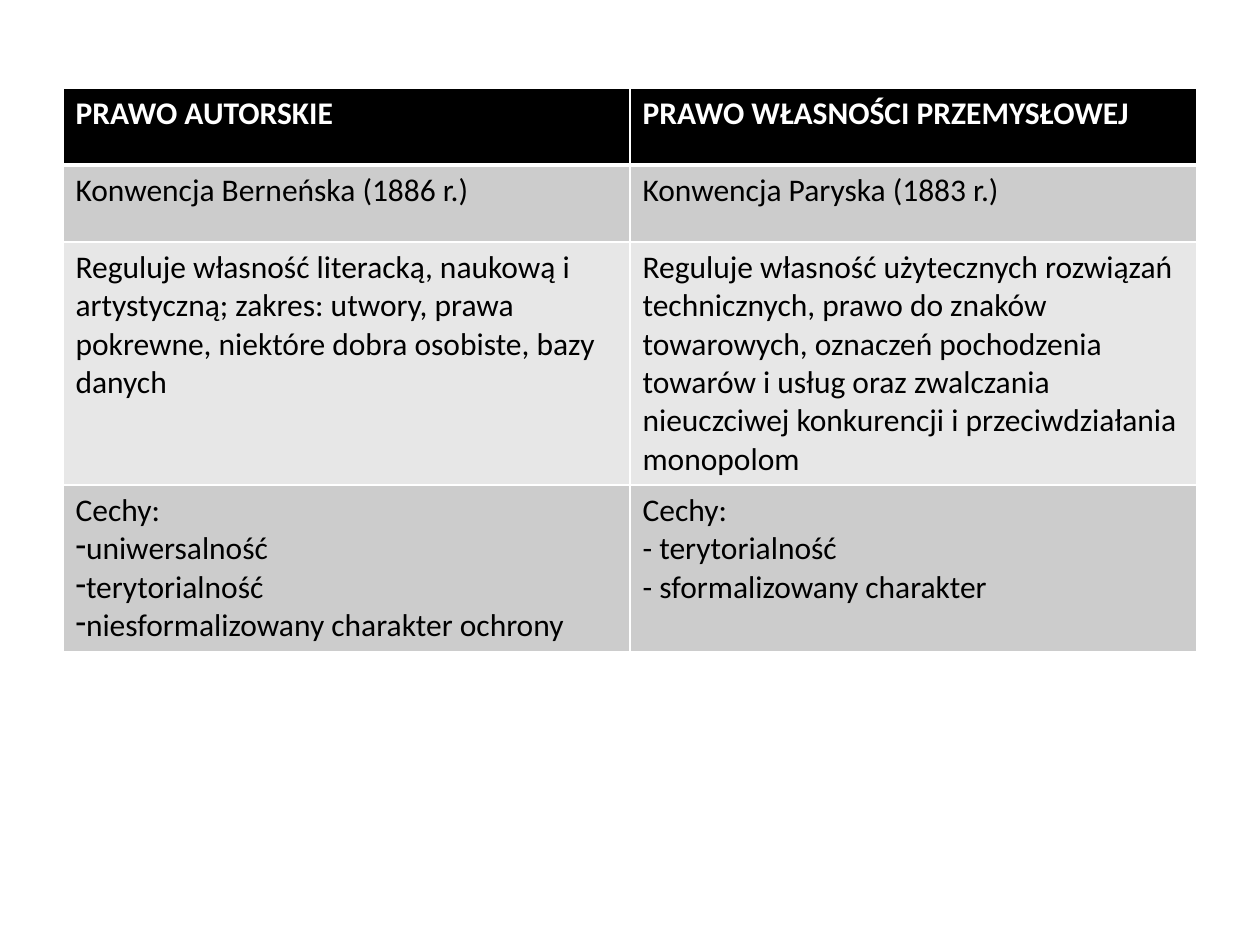
from dataclasses import dataclass

from lxml import etree
from pptx import Presentation
from pptx.dml.color import RGBColor
from pptx.oxml.ns import qn
from pptx.util import Inches, Pt

COLORS = {
    "white": "FFFFFF",
    "black": "000000",
    "band_dark": "CCCCCC",
    "band_light": "E7E7E7",
}
FONT = "Calibri"
TEXT_SIZE = Pt(18)
ROW_HEIGHT = Inches(0.61)
THIN, THICK = Pt(1), Pt(3)


@dataclass(frozen=True)
class Line:
    text: str
    bullet: str = ""


@dataclass(frozen=True)
class LawRow:
    copyright_law: tuple[Line, ...]
    industrial_law: tuple[Line, ...]
    fill: str
    color: str = "black"
    bold: bool = False
    top: int = THIN
    bottom: int = THIN


ROWS = (
    LawRow(
        (Line("PRAWO AUTORSKIE"),),
        (Line("PRAWO WŁASNOŚCI PRZEMYSŁOWEJ"),),
        "black", color="white", bold=True, bottom=THICK,
    ),
    LawRow(
        (Line("Konwencja Berneńska (1886 r.)"),),
        (Line("Konwencja Paryska (1883 r.)"),),
        "band_dark", top=THICK,
    ),
    LawRow(
        (Line("Reguluje własność literacką, naukową i artystyczną; zakres: utwory, "
              "prawa pokrewne, niektóre dobra osobiste, bazy danych"),),
        (Line("Reguluje własność użytecznych rozwiązań technicznych, prawo do znaków "
              "towarowych, oznaczeń pochodzenia towarów i usług oraz zwalczania "
              "nieuczciwej konkurencji i przeciwdziałania monopolom"),),
        "band_light",
    ),
    LawRow(
        (Line("Cechy:"), Line("uniwersalność", "-"), Line("terytorialność", "-"),
         Line("niesformalizowany charakter ochrony", "-")),
        (Line("Cechy:"), Line("- terytorialność\n- sformalizowany charakter")),
        "band_dark",
    ),
)


def rgb(name: str) -> RGBColor:
    """Return the named colour."""
    return RGBColor.from_string(COLORS[name])


def add_borders(cell, row: LawRow) -> None:
    """Draw white lines on the four sides of a cell."""
    properties = cell._tc.get_or_add_tcPr()
    widths = {"a:lnL": THIN, "a:lnR": THIN, "a:lnT": row.top, "a:lnB": row.bottom}
    for tag, width in widths.items():
        border = etree.SubElement(properties, qn(tag), w=str(int(width)))
        fill = etree.SubElement(border, qn("a:solidFill"))
        etree.SubElement(fill, qn("a:srgbClr"), val=COLORS["white"])


def add_bullet(para, character: str) -> None:
    """Give a paragraph a bullet that sits right before its text."""
    properties = para._p.get_or_add_pPr()
    properties.set("marL", "0")
    properties.set("indent", "0")
    etree.SubElement(properties, qn("a:buFontTx"))
    etree.SubElement(properties, qn("a:buChar"), char=character)


def write_line(para, line: Line, row: LawRow) -> None:
    """Write one paragraph, with line breaks where the text has them."""
    if line.bullet:
        add_bullet(para, line.bullet)
    for index, part in enumerate(line.text.split("\n")):
        if index:
            para.add_line_break()
        span = para.add_run()
        span.text = part
        span.font.name = FONT
        span.font.size = TEXT_SIZE
        span.font.bold = row.bold
        span.font.color.rgb = rgb(row.color)


def fill_cell(cell, lines: tuple[Line, ...], row: LawRow) -> None:
    """Style a cell and write its paragraphs."""
    add_borders(cell, row)
    cell.fill.solid()
    cell.fill.fore_color.rgb = rgb(row.fill)
    frame = cell.text_frame
    for index, line in enumerate(lines):
        para = frame.add_paragraph() if index else frame.paragraphs[0]
        write_line(para, line, row)


def main() -> None:
    """Build the comparison of two branches of law."""
    deck = Presentation()
    deck.slide_width, deck.slide_height = Inches(10), Inches(7.5)
    page = deck.slides.add_slide(deck.slide_layouts[6])
    table_height = Inches(4.43)
    box = page.shapes.add_table(
        len(ROWS), 2, Inches(0.5), Inches(0.7), Inches(9), table_height
    )
    table = box.table
    for table_row, row in zip(table.rows, ROWS):
        table_row.height = ROW_HEIGHT
        for cell, lines in zip(table_row.cells, (row.copyright_law, row.industrial_law)):
            fill_cell(cell, lines, row)
    box.height = table_height
    deck.save("out.pptx")


if __name__ == "__main__":
    main()
